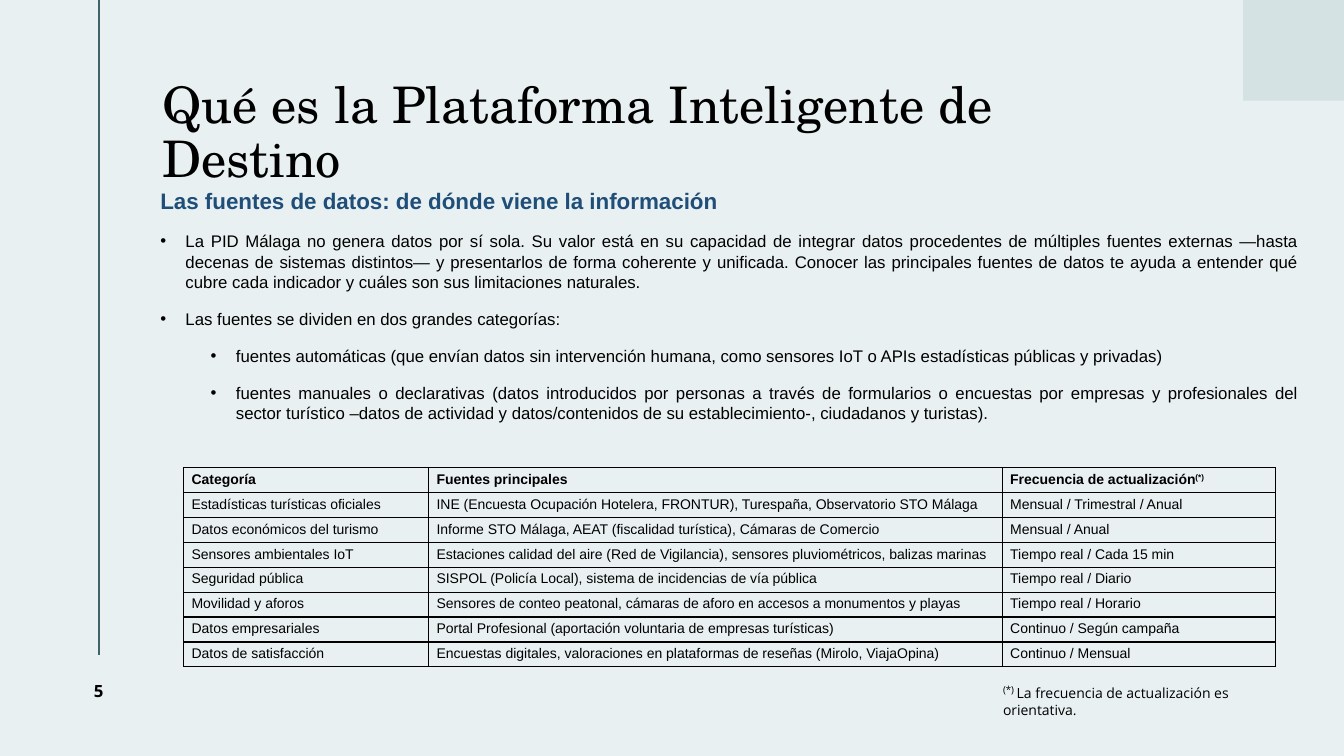
from lxml import etree
from pptx import Presentation
from pptx.dml.color import RGBColor
from pptx.enum.shapes import MSO_CONNECTOR, MSO_SHAPE
from pptx.enum.text import MSO_ANCHOR, MSO_AUTO_SIZE, PP_ALIGN
from pptx.oxml.ns import qn
from pptx.util import Pt

PX = 9144
LINE = MSO_CONNECTOR.STRAIGHT
RECT = MSO_SHAPE.RECTANGLE
MIDDLE = MSO_ANCHOR.MIDDLE
GROW = MSO_AUTO_SIZE.SHAPE_TO_FIT_TEXT
CENTER = PP_ALIGN.CENTER
JUSTIFY = PP_ALIGN.JUSTIFY
SIDES = ("a:lnL", "a:lnR", "a:lnT", "a:lnB")

TITLE = {"name": "TeX Gyre Schola", "size": Pt(36)}
HEAD = {"name": "Arial", "size": Pt(16), "bold": True}
BODY = {"name": "Arial", "size": Pt(12), "bold": False}
CELL = {"name": "Arial", "size": Pt(10), "bold": False}
TOP = {**CELL, "bold": True}
NUMBER = {"name": "Open Sans", "size": Pt(12), "bold": True}
MARK = {"name": "Open Sans", "size": Pt(12)}
NOTE = {"name": "Open Sans", "size": Pt(10)}

POINTS = [
    (0, "La PID Málaga no genera datos por sí sola. Su valor está en su capacidad de integrar datos procedentes de múltiples fuentes externas —hasta decenas de sistemas distintos— y presentarlos de forma coherente y unificada. Conocer las principales fuentes de datos te ayuda a entender qué cubre cada indicador y cuáles son sus limitaciones naturales."),
    (0, "Las fuentes se dividen en dos grandes categorías:"),
    (1, "fuentes automáticas (que envían datos sin intervención humana, como sensores IoT o APIs estadísticas públicas y privadas)"),
    (1, "fuentes manuales o declarativas (datos introducidos por personas a través de formularios o encuestas por empresas y profesionales del sector turístico –datos de actividad y datos/contenidos de su establecimiento-, ciudadanos y turistas)."),
]
COLS = (243, 569, 271)
ROWS = [
    ("Categoría", "Fuentes principales", "Frecuencia de actualización"),
    ("Estadísticas turísticas oficiales", "INE (Encuesta Ocupación Hotelera, FRONTUR), Turespaña, Observatorio STO Málaga", "Mensual / Trimestral / Anual"),
    ("Datos económicos del turismo", "Informe STO Málaga, AEAT (fiscalidad turística), Cámaras de Comercio", "Mensual / Anual"),
    ("Sensores ambientales IoT", "Estaciones calidad del aire (Red de Vigilancia), sensores pluviométricos, balizas marinas", "Tiempo real / Cada 15 min"),
    ("Seguridad pública", "SISPOL (Policía Local), sistema de incidencias de vía pública", "Tiempo real / Diario"),
    ("Movilidad y aforos", "Sensores de conteo peatonal, cámaras de aforo en accesos a monumentos y playas", "Tiempo real / Horario"),
    ("Datos empresariales", "Portal Profesional (aportación voluntaria de empresas turísticas)", "Continuo / Según campaña"),
    ("Datos de satisfacción", "Encuestas digitales, valoraciones en plataformas de reseñas (Mirolo, ViajaOpina)", "Continuo / Mensual"),
]


def px(*sizes):
    return [size * PX for size in sizes]


def paint(target, color):
    target.rgb = RGBColor.from_string(color)


def fill(target, color):
    target.fill.solid()
    paint(target.fill.fore_color, color)


def style(target, values):
    for key, value in values.items():
        setattr(target, key, value)


def add_run(para, text, form, color="000000", **extra):
    run = para.add_run()
    run.text = text
    style(run.font, form)
    paint(run.font.color, color)
    for key, value in extra.items():
        run.font._element.set(key, value)


def add_box(slide, place, insets, **frame):
    box = slide.shapes.add_textbox(*px(*place)).text_frame
    sides = ("margin_left", "margin_top", "margin_right", "margin_bottom")
    style(box, {"word_wrap": True, **dict(zip(sides, px(*insets))), **frame})
    return box


def add_point(box, level, text):
    para = box.add_paragraph()
    style(para, {"alignment": JUSTIFY, "level": level, "space_before": Pt(12)})
    props = para._p.get_or_add_pPr()
    left, back = px(25 + 50 * level, -25)
    props.set("marL", str(left))
    props.set("indent", str(back))
    tint = etree.SubElement(props, qn("a:buClr"))
    etree.SubElement(tint, qn("a:srgbClr"), val="000000")
    etree.SubElement(props, qn("a:buFont"), typeface="Arial")
    etree.SubElement(props, qn("a:buChar"), char="•")
    add_run(para, text, BODY)


def add_edges(cell):
    props = cell._tc.get_or_add_tcPr()
    for side in SIDES:
        edge = etree.SubElement(props, qn(side), w=str(Pt(1)))
        solid = etree.SubElement(edge, qn("a:solidFill"))
        etree.SubElement(solid, qn("a:srgbClr"), val="000000")


def add_grid(slide):
    place = px(182, 464, sum(COLS), 24 * len(ROWS))
    table = slide.shapes.add_table(len(ROWS), len(COLS), *place).table
    style(table, {"first_row": False, "horz_banding": False})
    for col, width in zip(table.columns, px(*COLS)):
        col.width = width
    for row, texts in zip(table.rows, ROWS):
        row.height = 24 * PX
        form = TOP if texts is ROWS[0] else CELL
        for cell, text in zip(row.cells, texts):
            wide, high = px(8, 4)
            style(cell, {"margin_left": wide, "margin_right": wide,
                         "margin_top": high, "margin_bottom": high})
            add_edges(cell)
            cell.fill.background()
            add_run(cell.text_frame.paragraphs[0], text, form)
    last = table.cell(0, 2).text_frame.paragraphs[0]
    add_run(last, "(*)", TOP, baseline="30000")


def add_decor(slide):
    line = slide.shapes.add_connector(LINE, *px(98, 0, 98, 650))
    line.line.width = Pt(1.5)
    paint(line.line.color, "3F636A")
    etree.SubElement(line._element.spPr, qn("a:effectLst"))
    block = slide.shapes.add_shape(RECT, *px(1233, 0, 100, 100))
    block.shadow.inherit = False
    block.line.fill.background()
    fill(block, "D4E2E4")


def main():
    deck = Presentation()
    deck.slide_width, deck.slide_height = px(1333, 750)
    slide = deck.slides.add_slide(deck.slide_layouts[6])
    fill(slide.background, "E9F0F1")
    add_decor(slide)

    body = add_box(slide, (159, 186, 1130, 451), (0, 0, 0, 0))
    add_run(body.paragraphs[0], "Las fuentes de datos: de dónde viene la información", HEAD, "1F4E79")
    for level, text in POINTS:
        add_point(body, level, text)

    number = add_box(slide, (45, 650, 106, 71), (10, 5, 10, 5), vertical_anchor=MIDDLE)
    number.paragraphs[0].alignment = CENTER
    add_run(number.paragraphs[0], "5", NUMBER, spc="150")

    add_grid(slide)

    note = add_box(slide, (985, 671, 313, 30), (10, 5, 10, 5), auto_size=GROW)
    add_run(note.paragraphs[0], "(*) ", MARK, baseline="30000")
    add_run(note.paragraphs[0], "La frecuencia de actualización es orientativa.", NOTE)

    title = add_box(slide, (161, 55, 1001, 156), (0, 5, 10, 5), vertical_anchor=MIDDLE)
    title.paragraphs[0].line_spacing = 0.9
    add_run(title.paragraphs[0], "Qué es la Plataforma Inteligente de Destino", TITLE)

    deck.save("out.pptx")


if __name__ == "__main__":
    main()
